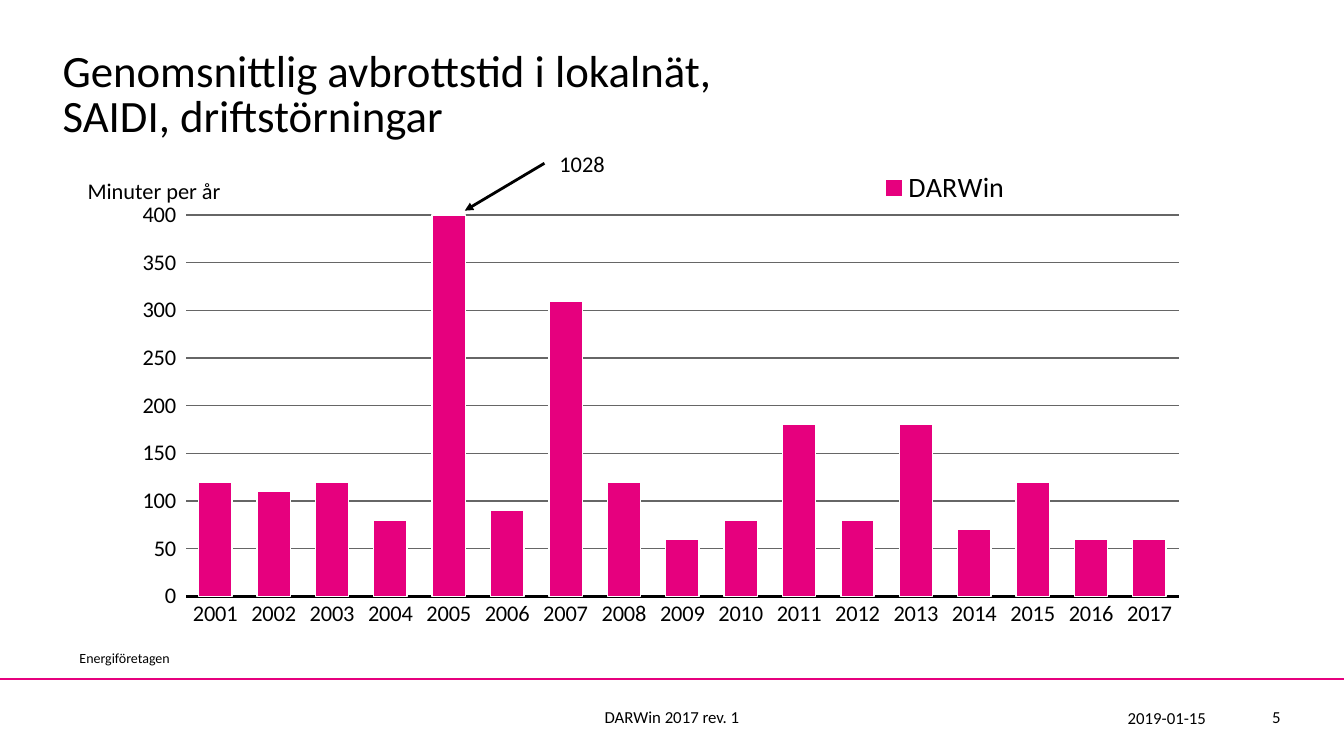
"""Build the slide on average outage time in local grids, 2001-2017."""
from lxml import etree
from pptx import Presentation
from pptx.chart.data import CategoryChartData
from pptx.dml.color import RGBColor
from pptx.enum.chart import XL_CHART_TYPE, XL_LEGEND_POSITION, XL_TICK_MARK
from pptx.enum.shapes import MSO_CONNECTOR
from pptx.enum.text import MSO_ANCHOR, MSO_AUTO_SIZE, PP_ALIGN
from pptx.oxml.ns import qn
from pptx.util import Inches, Pt

MAGENTA = RGBColor(0xE6, 0x00, 0x7E)
BLACK = RGBColor(0x00, 0x00, 0x00)
WHITE = RGBColor(0xFF, 0xFF, 0xFF)
GREY = RGBColor(0x66, 0x66, 0x66)
FONT = "Calibri"
COLUMNS = XL_CHART_TYPE.COLUMN_CLUSTERED
LEGEND_TOP = XL_LEGEND_POSITION.TOP
NO_TICK, TICK_OUT = XL_TICK_MARK.NONE, XL_TICK_MARK.OUTSIDE
STRAIGHT = MSO_CONNECTOR.STRAIGHT
TOP, MIDDLE, BOTTOM = MSO_ANCHOR.TOP, MSO_ANCHOR.MIDDLE, MSO_ANCHOR.BOTTOM
LEFT, CENTER, RIGHT = PP_ALIGN.LEFT, PP_ALIGN.CENTER, PP_ALIGN.RIGHT
NO_AUTOFIT = MSO_AUTO_SIZE.NONE


def set_font(font, size):
    for key, value in {"name": FONT, "size": Pt(size), "bold": False}.items():
        setattr(font, key, value)
    font.color.rgb = BLACK


def add_line(start, end, color, width):
    line = slide.shapes.add_connector(STRAIGHT, *map(Inches, start + end))
    line.line.color.rgb = color
    line.line.width = Pt(width)
    etree.SubElement(line._element.spPr, qn("a:effectLst"))
    return line


prs = Presentation()
prs.slide_width, prs.slide_height = Inches(13.33), Inches(7.5)
slide = prs.slides.add_slide(prs.slide_layouts[5])

add_line((0, 6.74), (13.33, 6.74), MAGENTA, 1.5)

title = slide.shapes.title
title_box = {"left": 0.52, "top": 0.21, "width": 12, "height": 1.25}
for key, value in title_box.items():
    setattr(title, key, Inches(value))
title.text_frame.text = "Genomsnittlig avbrottstid i lokalnät, \vSAIDI, driftstörningar"
title_format = {"vertical_anchor": BOTTOM, "auto_size": NO_AUTOFIT, "word_wrap": True}
for key, value in title_format.items():
    setattr(title.text_frame, key, value)
heading = title.text_frame.paragraphs[0]
heading.alignment = LEFT
heading.line_spacing = 0.85
set_font(heading.font, 32)

outage_minutes = CategoryChartData(number_format="#,##0")
outage_minutes.categories = [str(year) for year in range(2001, 2018)]
outage_minutes.add_series("DARWin", [120, 110, 120, 80, 1030, 90, 310, 120, 60,
                                     80, 180, 80, 180, 70, 120, 60, 60])
chart = slide.shapes.add_chart(COLUMNS, Inches(0.94), Inches(1.66), Inches(12.4),
                               Inches(5.05), outage_minutes).chart
chart.has_title = False
set_font(chart.font, 18)

years = chart.category_axis
years.major_tick_mark = NO_TICK
years.format.line.color.rgb = BLACK
years.format.line.width = Pt(2)
set_font(years.tick_labels.font, 16)

minutes = chart.value_axis
minutes_format = {"minimum_scale": 0, "maximum_scale": 400, "major_unit": 50,
                  "major_tick_mark": TICK_OUT, "has_major_gridlines": True}
for key, value in minutes_format.items():
    setattr(minutes, key, value)
minutes.format.line.fill.background()
minutes.major_gridlines.format.line.color.rgb = GREY
minutes.major_gridlines.format.line.width = Pt(1)
set_font(minutes.tick_labels.font, 16)

bars = chart.plots[0]
bars.gap_width = 75
bars.vary_by_categories = False
darwin = bars.series[0]
darwin.invert_if_negative = False
darwin.format.fill.solid()
darwin.format.fill.fore_color.rgb = MAGENTA
darwin.format.line.color.rgb = WHITE
darwin.format.line.width = Pt(1)

chart.has_legend = True
chart.legend.position = LEGEND_TOP
chart.legend.include_in_layout = False
set_font(chart.legend.font, 20)

plot_area = chart._chartSpace.chart.plotArea
for old_layout in plot_area.findall(qn("c:layout")):
    plot_area.remove(old_layout)
legend_pos = chart.legend._element.find(qn("c:legendPos"))
plot_layout = etree.Element(qn("c:layout"))
legend_layout = etree.Element(qn("c:layout"))
plot_area.insert(0, plot_layout)
legend_pos.addnext(legend_layout)
for layout, target, bounds in (
    (plot_layout, "inner", (0.073, 0.094, 0.794, 0.749)),
    (legend_layout, None, (0.62, 0, 0.12, 0.08)),
):
    manual = etree.SubElement(layout, qn("c:manualLayout"))
    if target:
        etree.SubElement(manual, qn("c:layoutTarget"), val=target)
    for side in "xy":
        etree.SubElement(manual, qn(f"c:{side}Mode"), val="edge")
    for side, share in zip("xywh", bounds):
        etree.SubElement(manual, qn(f"c:{side}"), val=str(share))

labels = [
    ("Energiföretagen", (0.69, 6.41, 7.5, 0.2), 10, LEFT, TOP, True, 0.9),
    ("Minuter per år", (0.77, 1.71, 1.54, 0.37), 16, LEFT, TOP, False, 1.0),
    ("2019-01-15", (10.49, 6.92, 1.57, 0.4), 12, RIGHT, MIDDLE, True, 1.0),
    ("DARWin 2017 rev. 1", (3.29, 6.91, 6.75, 0.4), 12, CENTER, MIDDLE, True, 1.0),
    ("5", (12.14, 6.91, 0.66, 0.4), 12, RIGHT, MIDDLE, True, 1.0),
    ("1028", (5.45, 1.44, 0.91, 0.37), 16, LEFT, TOP, True, 1.0),
]
for text, box, size, alignment, anchor, wrap, spacing in labels:
    frame = slide.shapes.add_textbox(*map(Inches, box)).text_frame
    frame.text = text
    frame.word_wrap = wrap
    frame.vertical_anchor = anchor
    frame.paragraphs[0].alignment = alignment
    frame.paragraphs[0].line_spacing = spacing
    set_font(frame.paragraphs[0].font, size)

peak_arrow = add_line((5.4, 1.62), (4.61, 2.09), BLACK, 2)
etree.SubElement(peak_arrow.line._get_or_add_ln(), qn("a:tailEnd"), type="triangle")

prs.save("out.pptx")
